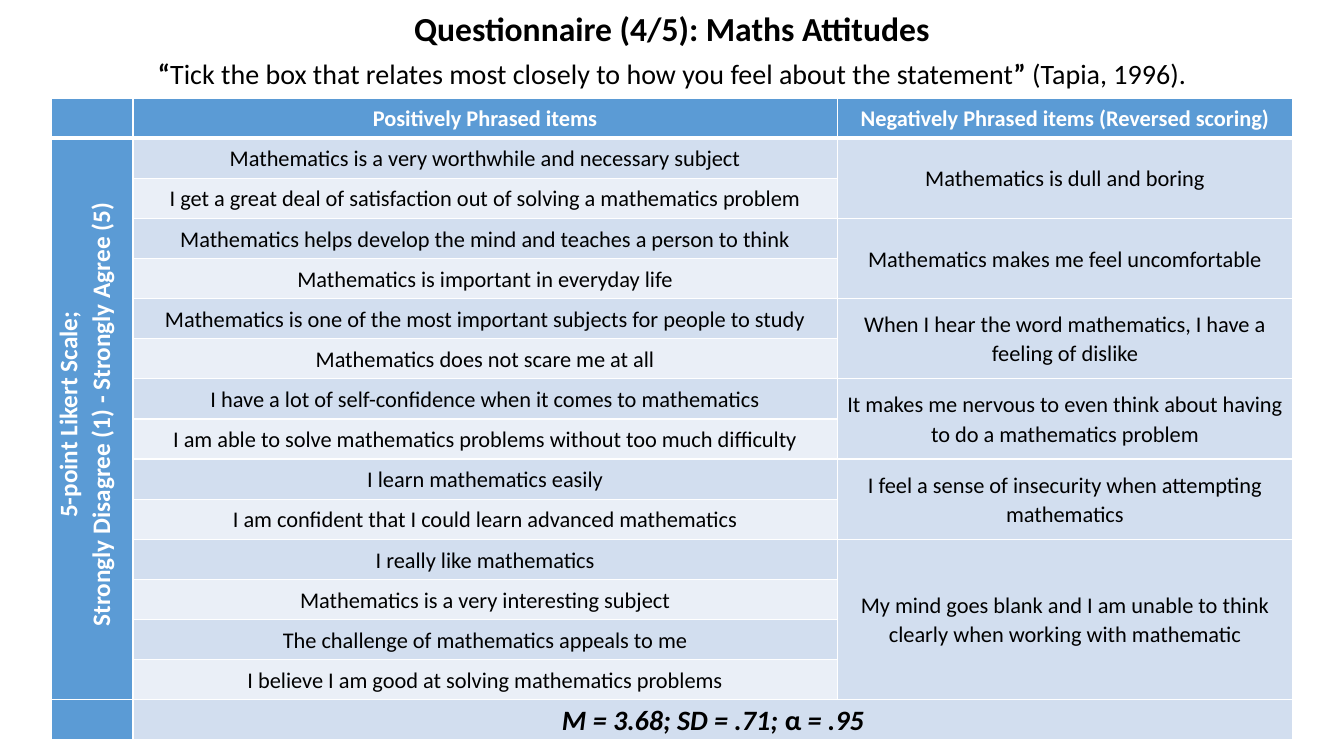
from dataclasses import dataclass

import lxml.etree
import pptx
import pptx.dml.color
import pptx.enum.text
import pptx.oxml.ns
import pptx.util

Pt = pptx.util.Pt
qn = pptx.oxml.ns.qn
ALIGN = pptx.enum.text.PP_ALIGN
ANCHOR = pptx.enum.text.MSO_ANCHOR


@dataclass(frozen=True)
class Theme:
    font: str = "Calibri"
    text: str = "000000"
    white: str = "FFFFFF"
    header: str = "5B9BD5"
    band_dark: str = "D2DEEF"
    band_light: str = "EAEFF7"
    title: int = 24
    lead: int = 20
    scale: int = 18
    item: int = 16
    stats: int = 20
    border: int = 1
    header_rule: int = 3


THEME = Theme()

POSITIVE = [
    "Mathematics is a very worthwhile and necessary subject",
    "I get a great deal of satisfaction out of solving a mathematics problem",
    "Mathematics helps develop the mind and teaches a person to think",
    "Mathematics is important in everyday life",
    "Mathematics is one of the most important subjects for people to study",
    "Mathematics does not scare me at all",
    "I have a lot of self-confidence when it comes to mathematics",
    "I am able to solve mathematics problems without too much difficulty",
    "I learn mathematics easily",
    "I am confident that I could learn advanced mathematics",
    "I really like mathematics",
    "Mathematics is a very interesting subject",
    "The challenge of mathematics appeals to me",
    "I believe I am good at solving mathematics problems",
]
# Statement and the number of rows it spans
NEGATIVE = [
    ("Mathematics is dull and boring", 2),
    ("Mathematics makes me feel uncomfortable", 2),
    ("When I hear the word mathematics, I have a feeling of dislike", 2),
    ("It makes me nervous to even think about having to do a mathematics problem", 2),
    ("I feel a sense of insecurity when attempting mathematics", 2),
    ("My mind goes blank and I am unable to think clearly when working with mathematic", 4),
]
HEADINGS = ["", "Positively Phrased items", "Negatively Phrased items (Reversed scoring)"]
SCALE = ["5-point Likert Scale;", "Strongly Disagree (1) - Strongly Agree (5)"]


def rgb(value):
    return pptx.dml.color.RGBColor.from_string(value)


def style_paragraph(p, size, color=THEME.text, bold=False, spacing=1.07):
    p.alignment = ALIGN.CENTER
    p.line_spacing = spacing
    p.font.name = THEME.font
    p.font.size = Pt(size)
    p.font.bold = bold
    p.font.color.rgb = rgb(color)


def add_run(p, text):
    r = p.add_run()
    r.text = text
    return r


def add_text_box(s, box, size, anchor, bold=False):
    """Add an empty centred text box and return its paragraph."""
    tf = s.shapes.add_textbox(*map(Pt, box)).text_frame
    tf.word_wrap = True
    tf.vertical_anchor = anchor
    style_paragraph(tf.paragraphs[0], size, bold=bold, spacing=0.9)
    return tf.paragraphs[0]


def add_title(s, box):
    p = add_text_box(s, box, THEME.title, ANCHOR.MIDDLE, bold=True)
    add_run(p, "Questionnaire (4/5): Maths Attitudes")


def add_lead(s, box):
    p = add_text_box(s, box, THEME.lead, ANCHOR.TOP)
    add_run(p, "“").font.bold = True
    add_run(p, "Tick the box that relates most closely to how you feel about the statement")
    add_run(p, "” ").font.bold = True
    add_run(p, "(Tapia, 1996).")


def set_borders(cell, bottom):
    tc_pr = cell._tc.get_or_add_tcPr()
    widths = {"lnL": THEME.border, "lnR": THEME.border, "lnT": THEME.border, "lnB": bottom}
    for i, (side, width) in enumerate(widths.items()):
        ln = lxml.etree.Element(qn("a:" + side), w=str(Pt(width)))
        fill = lxml.etree.SubElement(ln, qn("a:solidFill"))
        lxml.etree.SubElement(fill, qn("a:srgbClr"), val=THEME.white)
        tc_pr.insert(i, ln)


def cell_fill(row, col, last_row):
    if row == 0 or col == 0:
        return THEME.header
    if col == 1 and row < last_row and row % 2 == 0:
        return THEME.band_light
    return THEME.band_dark


def style_grid(table):
    last_row = len(table.rows) - 1
    for row in range(last_row + 1):
        for col in range(len(table.columns)):
            cell = table.cell(row, col)
            cell.margin_left = cell.margin_right = Pt(4.5)
            cell.margin_top = cell.margin_bottom = 0
            cell.vertical_anchor = ANCHOR.MIDDLE
            cell.fill.solid()
            cell.fill.fore_color.rgb = rgb(cell_fill(row, col, last_row))
            set_borders(cell, THEME.border if row else THEME.header_rule)
            style_paragraph(cell.text_frame.paragraphs[0], THEME.item)


def fill_scale(cell):
    """Write the rating scale upwards along the first column."""
    cell.vertical_anchor = ANCHOR.TOP
    cell._tc.get_or_add_tcPr().set("vert", "vert270")
    tf = cell.text_frame
    for i, line in enumerate(SCALE):
        p = tf.add_paragraph() if i else tf.paragraphs[0]
        style_paragraph(p, THEME.scale, THEME.white, bold=True)
        p._p.get_or_add_pPr().set("marL", str(Pt(6)))
        add_run(p, line)


def fill_stats(cell):
    p = cell.text_frame.paragraphs[0]
    style_paragraph(p, THEME.stats, bold=True)
    for text, italic in [("M = 3.68; SD = .71; ", True), ("α ", False), ("= .95", True)]:
        add_run(p, text).font.italic = italic


def add_items_table(s, box):
    left, top, width, height = box
    n_rows = len(POSITIVE) + 2
    last = n_rows - 1
    table = s.shapes.add_table(n_rows, 3, *map(Pt, box)).table
    for row in table.rows:
        row.height = Pt(height / n_rows)
    for column, share in zip(table.columns, (0.066, 0.567, 0.367)):
        column.width = Pt(width * share)
    style_grid(table)

    for col, heading in enumerate(HEADINGS):
        p = table.cell(0, col).text_frame.paragraphs[0]
        style_paragraph(p, THEME.item, THEME.white, bold=True)
        if heading:
            add_run(p, heading)

    for row, statement in enumerate(POSITIVE, start=1):
        add_run(table.cell(row, 1).text_frame.paragraphs[0], statement)

    row = 1
    for statement, span in NEGATIVE:
        cell = table.cell(row, 2)
        cell.merge(table.cell(row + span - 1, 2))
        add_run(cell.text_frame.paragraphs[0], statement)
        row += span

    table.cell(1, 0).merge(table.cell(last - 1, 0))
    fill_scale(table.cell(1, 0))
    table.cell(last, 1).merge(table.cell(last, 2))
    fill_stats(table.cell(last, 1))


def main():
    prs = pptx.Presentation()
    prs.slide_width, prs.slide_height = Pt(960), Pt(540)
    s = prs.slides.add_slide(prs.slide_layouts[6])
    add_title(s, (66, 4.5, 828, 34.5))
    add_lead(s, (36.5, 39.5, 887, 25))
    add_items_table(s, (36.5, 70, 887, 458.6))
    prs.save("out.pptx")


if __name__ == "__main__":
    main()
